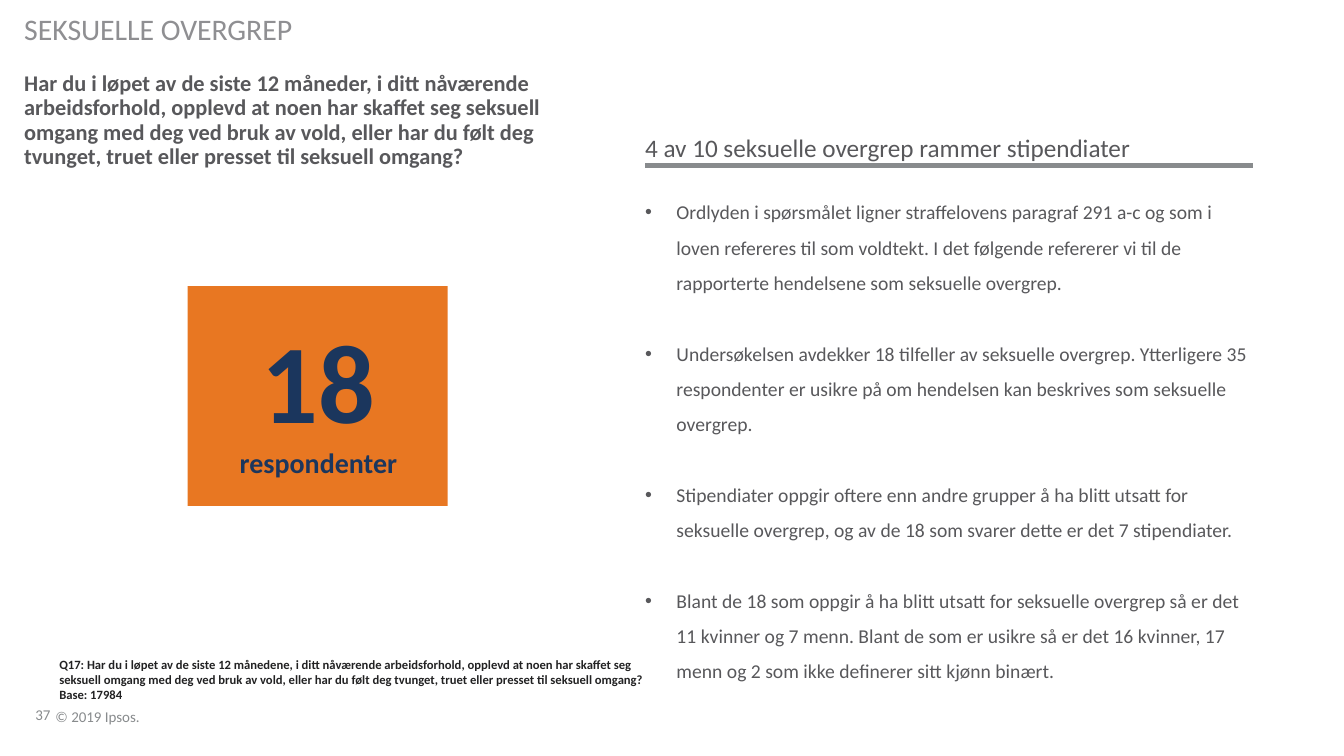
"""Build the survey slide on sexual assault among respondents."""
from dataclasses import dataclass, field

from lxml.etree import SubElement
from pptx import Presentation
from pptx.dml.color import RGBColor
from pptx.enum.shapes import MSO_CONNECTOR as Connector, MSO_SHAPE as Shape
from pptx.enum.text import MSO_ANCHOR as Anchor, MSO_AUTO_SIZE as AutoSize, PP_ALIGN as Align
from pptx.oxml.ns import qn
from pptx.slide import Slide
from pptx.util import Pt

COLORS = {
    "orange": "E87722",
    "navy": "1B365D",
    "text": "58585B",
    "heading": "8F8F92",
    "footer": "888B8D",
    "note": "222223",
}
FONT = "Calibri"
COLUMN_LEFT, COLUMN_WIDTH, BULLET_INDENT = 460.8, 434.4, 22.4

QUESTION = (
    "Har du i løpet av de siste 12 måneder, i ditt nåværende arbeidsforhold, opplevd at noen har "
    "skaffet seg seksuell omgang med deg ved bruk av vold, eller har du følt deg tvunget, truet "
    "eller presset til seksuell omgang?"
)
FOOTNOTE = (
    "Q17: Har du i løpet av de siste 12 månedene, i ditt nåværende arbeidsforhold, opplevd at noen "
    "har skaffet seg seksuell omgang med deg ved bruk av vold, eller har du følt deg tvunget, truet "
    "eller presset til seksuell omgang?"
)
FINDINGS = (
    "Ordlyden i spørsmålet ligner straffelovens paragraf 291 a-c og som i loven refereres til som "
    "voldtekt. I det følgende refererer vi til de rapporterte hendelsene som seksuelle overgrep.",
    "Undersøkelsen avdekker 18 tilfeller av seksuelle overgrep. Ytterligere 35 respondenter er "
    "usikre på om hendelsen kan beskrives som seksuelle overgrep.",
    "Stipendiater oppgir oftere enn andre grupper å ha blitt utsatt for seksuelle overgrep, og av "
    "de 18 som svarer dette er det 7 stipendiater.",
    "Blant de 18 som oppgir å ha blitt utsatt for seksuelle overgrep så er det 11 kvinner og 7 menn. "
    "Blant de som er usikre så er det 16 kvinner, 17 menn og 2 som ikke definerer sitt kjønn binært.",
)


@dataclass(frozen=True)
class TextBlock:
    """Text with its place in points and its format values."""

    box: tuple[float, float, float, float]
    lines: tuple[str, ...]
    sizes: tuple[float, ...]
    color: str
    bold: bool = False
    bulleted: bool = False
    gap: float = 0
    margins: tuple[float, float] = (0, 0)
    frame: dict = field(default_factory=dict)
    paragraph: dict = field(default_factory=dict)


TITLE = TextBlock((17.3, 51.8, 422.6, 69.8), (QUESTION,), (16,), "text", bold=True,
                  paragraph={"line_spacing": 0.9})
FOOTER_FORMAT = {"frame": {"vertical_anchor": Anchor.BOTTOM}, "paragraph": {"line_spacing": 0.85}}
BLOCKS = (
    TextBlock((25.2, 491.8, 32.4, 25.2), ("37",), (10.7,), "footer", **FOOTER_FORMAT),
    TextBlock((39.6, 500.4, 72.7, 18), ("© 2019 Ipsos.",), (10.7,), "footer", **FOOTER_FORMAT),
    TextBlock((17.3, 5, 706.3, 33.8), ("SEKSUELLE OVERGREP",), (21.3,), "heading",
              frame={"vertical_anchor": Anchor.MIDDLE}, paragraph={"line_spacing": 0.9}),
    TextBlock((35.3, 465.8, 434.2, 40.3), (FOOTNOTE, "Base: 17984"), (9, 9), "note", bold=True,
              margins=(7.2, 3.6)),
    TextBlock((COLUMN_LEFT, 134.6, COLUMN_WIDTH, 311), FINDINGS, (14,) * len(FINDINGS), "text",
              bulleted=True, gap=25.3, paragraph={"line_spacing": 1.5}),
    TextBlock((COLUMN_LEFT, 94.3, COLUMN_WIDTH, 26.6),
              ("4 av 10 seksuelle overgrep rammer stipendiater",), (18,), "text"),
    TextBlock((163.8, 222.5, 127.4, 121), ("18", "respondenter"), (80, 20), "navy", bold=True,
              paragraph={"alignment": Align.CENTER}),
)


def rgb(name: str) -> RGBColor:
    """Return a named colour."""
    return RGBColor.from_string(COLORS[name])


def apply(target, values: dict) -> None:
    """Set each format value on the target."""
    for key, value in values.items():
        setattr(target, key, value)


def add_bullet(paragraph) -> None:
    """Give a paragraph a hanging round bullet."""
    properties = paragraph._p.get_or_add_pPr()
    properties.set("marL", str(Pt(BULLET_INDENT)))
    properties.set("indent", str(-Pt(BULLET_INDENT)))
    SubElement(properties, qn("a:buFont"), typeface="Arial")
    SubElement(properties, qn("a:buChar"), char="•")


def write_text(holder, block: TextBlock) -> None:
    """Place the holder and fill it with the formatted lines."""
    apply(holder, dict(zip(("left", "top", "width", "height"), map(Pt, block.box))))
    side, end = map(Pt, block.margins)
    frame = holder.text_frame
    apply(frame, {
        "word_wrap": True, "auto_size": AutoSize.NONE, "vertical_anchor": Anchor.TOP,
        "margin_left": side, "margin_right": side, "margin_top": end, "margin_bottom": end,
        **block.frame,
    })
    for index, (line, size) in enumerate(zip(block.lines, block.sizes)):
        paragraph = frame.add_paragraph() if index else frame.paragraphs[0]
        if block.bulleted:
            add_bullet(paragraph)
        spacing = {"space_before": Pt(block.gap if index else 0), "space_after": Pt(0)}
        apply(paragraph, {"alignment": Align.LEFT, **spacing, **block.paragraph})
        run = paragraph.add_run()
        run.text = line
        apply(run.font, {"name": FONT, "size": Pt(size), "bold": block.bold})
        run.font.color.rgb = rgb(block.color)


def add_count_panel(slide: Slide) -> None:
    """Add the orange panel behind the respondent count."""
    panel = slide.shapes.add_shape(Shape.RECTANGLE, *map(Pt, (134, 204.4, 185.8, 157)))
    panel.shadow.inherit = False
    panel.fill.solid()
    panel.fill.fore_color.rgb = rgb("orange")
    panel.line.fill.background()


def add_heading_rule(slide: Slide) -> None:
    """Add the grey rule under the findings heading."""
    ends = (COLUMN_LEFT, 118, COLUMN_LEFT + COLUMN_WIDTH, 118)
    rule = slide.shapes.add_connector(Connector.STRAIGHT, *map(Pt, ends))
    rule.line.color.rgb = rgb("footer")
    rule.line.width = Pt(3.5)
    SubElement(rule._element.spPr, qn("a:effectLst"))


def main() -> None:
    """Build and save the slide."""
    deck = Presentation()
    apply(deck, {"slide_width": Pt(960), "slide_height": Pt(540)})
    slide = deck.slides.add_slide(deck.slide_layouts.get_by_name("Title Only"))
    write_text(slide.shapes.title, TITLE)
    add_count_panel(slide)
    for block in BLOCKS:
        write_text(slide.shapes.add_textbox(0, 0, 0, 0), block)
    add_heading_rule(slide)
    deck.save("out.pptx")


if __name__ == "__main__":
    main()
